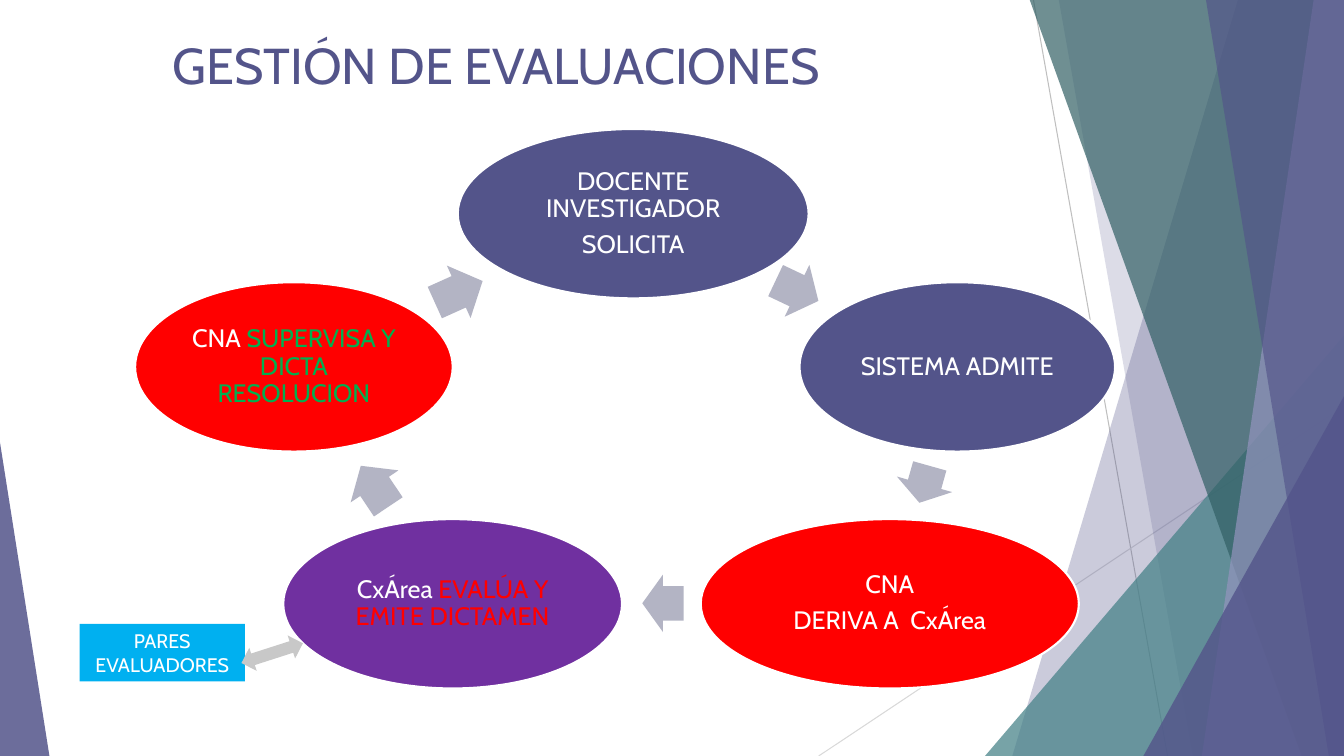
import lxml.etree
import pptx
import pptx.dml.color
import pptx.enum.shapes
import pptx.enum.text
import pptx.oxml.ns
import pptx.util

Inches = pptx.util.Inches
Pt = pptx.util.Pt
SHAPE = pptx.enum.shapes.MSO_SHAPE
CENTER = pptx.enum.text.PP_ALIGN.CENTER
WIDTH, HEIGHT = 13.33, 7.5
COLORS = {
    "indigo": "53548A", "lavender": "9394BE", "teal": "438086", "deep teal": "326065",
    "red": "FF0000", "purple": "7030A0", "green": "00B050", "sky": "00B0F0",
    "step arrow": "B3B4C4", "peer arrow": "C8C8C8", "white": "FFFFFF",
    "hairline": "BFBFBF", "pale hairline": "D9D9D9",
}


class EvaluationSlide:
    """Draw the parts of the evaluation cycle on one slide in a shared style."""

    font_name = "Cabin"
    step_frame = dict.fromkeys(
        ("margin_left", "margin_top", "margin_right", "margin_bottom"), Inches(0.03))
    step_paragraph = {"alignment": CENTER, "line_spacing": 0.9, "space_after": Pt(6.3)}

    def __init__(self, slide):
        self.slide = slide

    def color(self, name):
        return pptx.dml.color.RGBColor.from_string(COLORS[name])

    def apply(self, target, values):
        for attribute, value in values.items():
            setattr(target, attribute, value)

    def paint(self, shape, fill, opacity=100, outline=None):
        shape.shadow.inherit = False
        shape.fill.solid()
        shape.fill.fore_color.rgb = self.color(fill)
        if opacity < 100:
            solid = shape._element.spPr.find(pptx.oxml.ns.qn("a:solidFill"))
            lxml.etree.SubElement(
                solid[0], pptx.oxml.ns.qn("a:alpha"), val=str(opacity * 1000))
        if outline:
            shape.line.color.rgb = self.color(outline)
            shape.line.width = Pt(1.5)
        else:
            shape.line.fill.background()
        return shape

    def shape(self, preset, box, fill, opacity=100, outline=None, rotation=0, adjustments=()):
        shape = self.slide.shapes.add_shape(preset, *map(Inches, box))
        shape.rotation = rotation
        for index, value in enumerate(adjustments):
            shape.adjustments[index] = value
        return self.paint(shape, fill, opacity, outline)

    def hairline(self, start, end, color):
        line = self.slide.shapes.add_connector(
            pptx.enum.shapes.MSO_CONNECTOR.STRAIGHT, *map(Inches, start + end))
        line.line.color.rgb = self.color(color)
        line.line.width = Pt(0.75)
        lxml.etree.SubElement(line._element.spPr, pptx.oxml.ns.qn("a:effectLst"))

    def band(self, top_left, bottom_left, fill, opacity):
        top = -0.01
        corners = [(top_left, top), (WIDTH, top), (WIDTH, HEIGHT), (bottom_left, HEIGHT)]
        corners = [(Inches(x), Inches(y)) for x, y in corners]
        outline = self.slide.shapes.build_freeform(*corners[0])
        outline.add_line_segments(corners[1:], close=True)
        self.paint(outline.convert_to_shape(), fill, opacity)

    def corner(self, left, top, width, fill, opacity, apex):
        self.shape(SHAPE.ISOSCELES_TRIANGLE, (left, top, width, HEIGHT - top),
                   fill, opacity, adjustments=[apex])

    def fill_text(self, frame, paragraphs, size, frame_format, paragraph_format):
        self.apply(frame, {"word_wrap": True, **frame_format})
        for index, runs in enumerate(paragraphs):
            paragraph = frame.add_paragraph() if index else frame.paragraphs[0]
            self.apply(paragraph, paragraph_format)
            for text, color in runs:
                run = paragraph.add_run()
                run.text = text
                self.apply(run.font, {"name": self.font_name, "size": Pt(size)})
                run.font.color.rgb = self.color(color)

    def title(self, text, box):
        heading = self.slide.shapes.add_textbox(*map(Inches, box))
        self.fill_text(heading.text_frame, [[(text, "indigo")]], 36, {}, {})

    def step(self, left, top, width, fill, paragraphs):
        ellipse = self.shape(SHAPE.OVAL, (left, top, width, 1.68), fill, outline="white")
        self.fill_text(ellipse.text_frame, paragraphs, 18, self.step_frame, self.step_paragraph)

    def step_arrow(self, left, top, width, rotation):
        self.shape(SHAPE.RIGHT_ARROW, (left, top, width, 0.57), "step arrow",
                   rotation=rotation, adjustments=[0.6, 0.5])

    def peers(self, text, box):
        label = self.shape(SHAPE.RECTANGLE, box, "sky")
        self.fill_text(label.text_frame, [[(text, "white")]], 14, {}, {"alignment": CENTER})


def main():
    presentation = pptx.Presentation()
    presentation.slide_width = Inches(WIDTH)
    presentation.slide_height = Inches(HEIGHT)
    page = EvaluationSlide(presentation.slides.add_slide(presentation.slide_layouts[6]))

    page.hairline((10.25, 0), (11.58, HEIGHT), "hairline")
    page.hairline((WIDTH, 4.03), (8.12, HEIGHT), "pale hairline")
    page.band(12.28, 10.04, "indigo", 30)
    page.band(10.5, 11.83, "indigo", 20)
    page.corner(9.77, 3.33, 3.56, "teal", 72, apex=1)
    page.band(10.21, 12.91, "deep teal", 70)
    page.band(13.03, 11.92, "lavender", 70)
    page.band(11.96, 13.18, "indigo", 65)
    page.corner(11.34, 3.93, 1.99, "indigo", 80, apex=1)
    page.corner(0, 4.39, 0.49, "indigo", 85, apex=0)

    page.title("GESTIÓN DE EVALUACIONES", (1.61, 0.29, 9.4, 1.44))

    cycle = [
        ((4.54, 1.28, 3.48, "indigo",
          [[("DOCENTE INVESTIGADOR", "white")], [("SOLICITA", "white")]]),
         (7.67, 2.6, 0.47, 25.4)),
        ((7.93, 2.8, 3.13, "indigo", [[("SISTEMA ADMITE", "white")]]),
         (8.98, 4.52, 0.38, 105.7)),
        ((6.95, 5.15, 3.75, "red",
          [[("CNA", "white")], [("DERIVA A  CxÁrea", "white")]]),
         (6.37, 5.7, 0.41, 180)),
        ((2.81, 5.15, 3.36, "purple",
          [[("CxÁrea ", "white"), ("EVALÚA Y EMITE DICTAMEN", "red")]]),
         (3.47, 4.54, 0.49, 236.2)),
        ((1.34, 2.8, 3.15, "red",
          [[("CNA ", "white"), ("SUPERVISA Y DICTA RESOLUCION", "green")]]),
         (4.29, 2.61, 0.52, 335.7)),
    ]
    for step, arrow in cycle:
        page.step(*step)
        page.step_arrow(*arrow)

    page.peers("PARES EVALUADORES", (0.79, 6.19, 1.64, 0.57))
    page.shape(SHAPE.LEFT_RIGHT_ARROW, (2.38, 6.36, 0.64, 0.24), "peer arrow", rotation=342.2)

    presentation.save("out.pptx")


if __name__ == "__main__":
    main()
